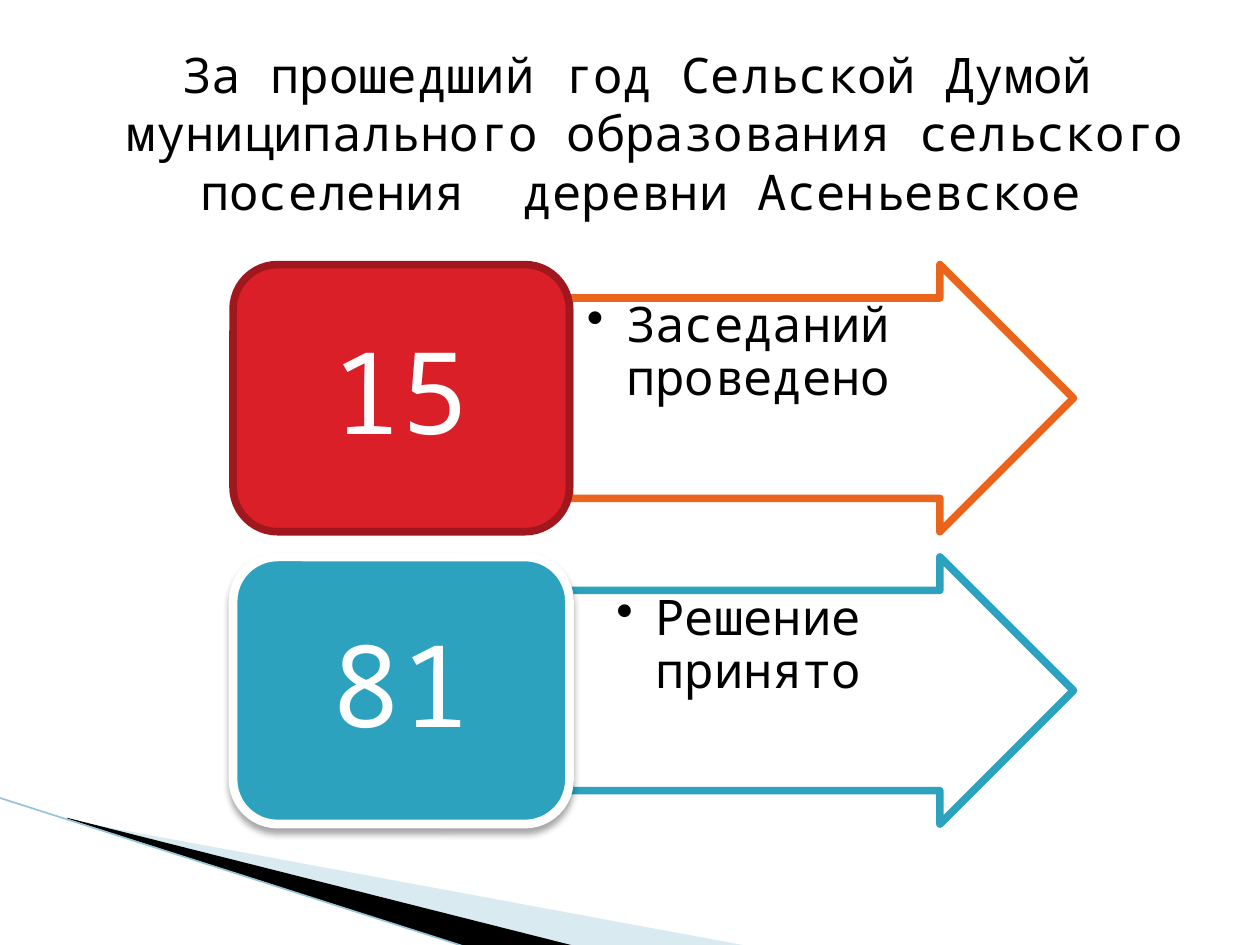
from lxml.etree import SubElement
from pptx import Presentation
from pptx.dml.color import RGBColor
from pptx.enum.shapes import MSO_CONNECTOR, MSO_SHAPE
from pptx.enum.text import MSO_ANCHOR, MSO_AUTO_SIZE, PP_ALIGN
from pptx.oxml.ns import qn
from pptx.util import Inches, Pt

FONT = "Noto Sans Mono"
BLACK = RGBColor(0x00, 0x00, 0x00)
WHITE = RGBColor(0xFF, 0xFF, 0xFF)
RED = RGBColor(0xDA, 0x1F, 0x28)
DARK_RED = RGBColor(0xA1, 0x17, 0x1E)
ORANGE = RGBColor(0xEB, 0x64, 0x1B)
TEAL = RGBColor(0x2D, 0xA2, 0xBF)
PALE_BLUE = RGBColor(0xA0, 0xCB, 0xDC)
LINE_BLUE = RGBColor(0x97, 0xC5, 0xD8)

# Content
TITLE = ("За прошедший год Сельской Думой муниципального образования "
         "сельского поселения  деревни Асеньевское ")
# number, label, box fill, box line, box line width, arrow line, raised
ROWS = [
    ("15", "Заседаний проведено", RED, DARK_RED, 4.33, ORANGE, False),
    ("81", "Решение принято", TEAL, WHITE, 5, TEAL, True),
]
# points, fill, opacity in percent
WEDGES = [
    ([(0.55, 6.51), (5.95, 7.51), (4.56, 7.51), (0.55, 6.5)], PALE_BLUE, 40),
    ([(0.53, 6.49), (4.57, 7.51), (3.72, 7.52), (0.54, 6.5)], BLACK, 100),
]

# Layout
BOX_LEFT, BOX_W, ARROW_W = 1.85, 2.67, 4
ROW_TOP, ROW_H, ROW_STEP = 2.1, 2.12, 2.32


def set_indent(p, left, hanging):
    pPr = p._p.get_or_add_pPr()
    pPr.set("marL", str(Inches(left)))
    pPr.set("indent", str(-Inches(hanging)))
    return pPr


def add_run(p, text, size, color):
    p.alignment = PP_ALIGN.CENTER
    r = p.add_run()
    r.text = text
    r.font.name = FONT
    r.font.size = Pt(size)
    r.font.color.rgb = color


def add_block(s, kind, left, top, width, fill, line, line_w, insets):
    sp = s.shapes.add_shape(kind, Inches(left), Inches(top), Inches(width), Inches(ROW_H))
    sp.shadow.inherit = False
    sp.fill.solid()
    sp.fill.fore_color.rgb = fill
    sp.line.color.rgb = line
    sp.line.width = Pt(line_w)
    tf = sp.text_frame
    tf.word_wrap = True
    tf.margin_left, tf.margin_top, tf.margin_right, tf.margin_bottom = map(Inches, insets)
    tf.paragraphs[0].line_spacing = 0.9
    return sp


def add_shadow(sp):
    effects = sp._element.spPr.find(qn("a:effectLst"))
    shadow = SubElement(effects, qn("a:outerShdw"), blurRad=str(Pt(4)), dist=str(Pt(3)),
                        dir="5400000", rotWithShape="0")
    color = SubElement(shadow, qn("a:srgbClr"), val=str(BLACK))
    SubElement(color, qn("a:alpha"), val="35000")


def add_wedge(s, points, fill, opacity):
    builder = s.shapes.build_freeform(*map(Inches, points[0]), scale=1.0)
    builder.add_line_segments([(Inches(x), Inches(y)) for x, y in points[1:]])
    sp = builder.convert_to_shape()
    sp.shadow.inherit = False
    sp.fill.solid()
    sp.fill.fore_color.rgb = fill
    sp.line.fill.background()
    if opacity < 100:
        color = sp._element.spPr.find(qn("a:solidFill"))[0]
        SubElement(color, qn("a:alpha"), val=str(opacity * 1000))


def add_row(s, top, number, label, fill, line, line_w, arrow_line, raised):
    # Arrow with its bulleted label
    arrow = add_block(s, MSO_SHAPE.RIGHT_ARROW, BOX_LEFT + BOX_W, top, ARROW_W,
                      WHITE, arrow_line, 4.33, (0.02, 0.02, 0.54, 0.02))
    arrow.adjustments[0], arrow.adjustments[1] = 0.75, 0.5
    arrow.text_frame.vertical_anchor = MSO_ANCHOR.TOP
    p = arrow.text_frame.paragraphs[0]
    SubElement(set_indent(p, 0.31, 0.31), qn("a:buChar"), char="•")
    add_run(p, label, 28, BLACK)

    # Box with its number
    box = add_block(s, MSO_SHAPE.ROUNDED_RECTANGLE, BOX_LEFT, top, BOX_W,
                    fill, line, line_w, (0.27, 0.14, 0.27, 0.14))
    box.text_frame.vertical_anchor = MSO_ANCHOR.MIDDLE
    add_run(box.text_frame.paragraphs[0], number, 65, WHITE)
    if raised:
        add_shadow(box)


def main():
    prs = Presentation()
    prs.slide_width, prs.slide_height = Inches(10), Inches(7.5)
    s = prs.slides.add_slide(prs.slide_layouts[5])

    # Corner decoration
    for wedge in WEDGES:
        add_wedge(s, *wedge)
    edge = s.shapes.add_connector(MSO_CONNECTOR.STRAIGHT, Inches(-0.01), Inches(6.33),
                                  Inches(3.71), Inches(7.52))
    edge.line.color.rgb = LINE_BLUE
    edge.line.width = Pt(0.95)
    SubElement(edge._element.spPr, qn("a:effectLst"))

    # Title
    title = s.shapes.title
    title.left, title.top, title.width, title.height = map(Inches, (0.5, 0.3, 9, 6.36))
    tf = title.text_frame
    tf.word_wrap = True
    tf.auto_size = MSO_AUTO_SIZE.NONE
    tf.vertical_anchor = MSO_ANCHOR.TOP
    set_indent(tf.paragraphs[0], 0.4, 0.28)
    add_run(tf.paragraphs[0], TITLE, 28, BLACK)

    # Numbered arrows
    for i, row in enumerate(ROWS):
        add_row(s, ROW_TOP + i * ROW_STEP, *row)

    prs.save("out.pptx")


if __name__ == "__main__":
    main()
